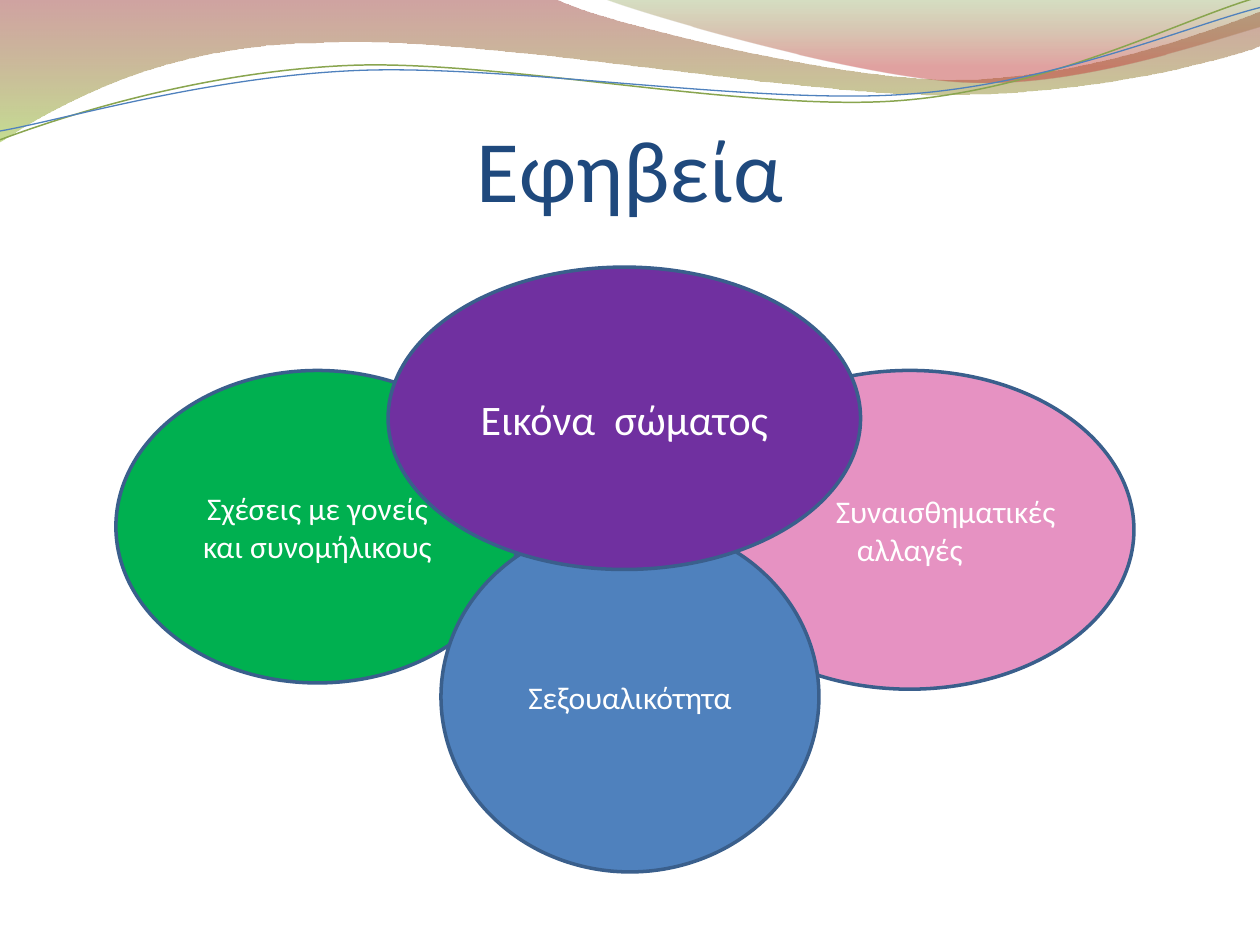
from pptx import Presentation
from pptx.dml.color import RGBColor
from pptx.enum.shapes import MSO_SHAPE
from pptx.enum.text import MSO_ANCHOR, MSO_AUTO_SIZE, PP_ALIGN
from pptx.oxml.ns import qn
from pptx.util import Inches, Pt
from lxml.etree import SubElement

THEME = {
    "font": "Calibri", "title": "1F497D", "text": "FFFFFF", "edge": "3A5F8C",
    "green": "00B050", "pink": "E692C2", "blue": "4F81BD", "purple": "7030A0",
    "big": 50, "mid": 24, "small": 18,
}
TITLE = "Εφηβεία"

# Ovals, back to front: text, fill, size, first-line indent, left, top, width, height
OVALS = [
    ("Σχέσεις με γονείς και συνομήλικους", "green", "small", 0, (0.92, 2.94, 3.2, 2.48)),
    ("Συναισθηματικές αλλαγές", "pink", "small", 0.57, (5.44, 2.94, 3.56, 2.53)),
    ("Σεξουαλικότητα", "blue", "small", 0, (3.5, 4.14, 3, 2.78)),
    ("Εικόνα  σώματος", "purple", "mid", 0, (3.08, 2.12, 3.75, 2.4)),
]

# Waves: a start point, then steps of one point (line) or three (curve)
BANDS = [
    ([(0, -0.01), (4.4, -0.01),
      (4.76, 0.17, 6.64, 0.63, 7.58, 0.63), (8.53, 0.63, 9.58, 0.26, 10, 0.09),
      (10.01, 0.36),
      (9.83, 0.44, 8.7, 0.76, 7.46, 0.75), (6.22, 0.75, 3.82, 0.28, 2.57, 0.34),
      (1.29, 0.35, 0.46, 0.83, -0.01, 1.13), (0, -0.01)],
     [(0, "973330", 45), (1, "95C238", 55)]),
    ([(4.79, -0.01),
      (5.09, 0.11, 6.82, 0.62, 7.69, 0.65), (8.56, 0.69, 9.61, 0.32, 10, 0.21),
      (10, 0), (4.79, -0.01)],
     [(0, "769537", 30), (0.8, "BE3330", 45)]),
]
STRANDS = [
    ([(0, 1.11), (0.48, 0.93, 1.58, 0.57, 2.77, 0.52),
      (3.95, 0.47, 5.93, 0.89, 7.13, 0.8), (8.33, 0.71, 9.38, 0.15, 9.98, -0.02)],
     "89A54F", 0.85),
    ([(0, 1.04), (0.47, 0.96, 1.64, 0.61, 2.83, 0.56),
      (4.03, 0.51, 5.97, 0.83, 7.17, 0.75), (8.36, 0.67, 9.41, 0.21, 10, 0.06)],
     "4F81BD", 0.75),
]


def color(name):
    return RGBColor.from_string(THEME.get(name, name))


def draw(slide, steps, close):
    """Draw the end points as lines, then bend the curved steps."""
    ends = [(Inches(step[-2]), Inches(step[-1])) for step in steps]
    pen = slide.shapes.build_freeform(*ends[0], scale=1.0)
    pen.add_line_segments(ends[1:], close=close)
    shape = pen.convert_to_shape()
    shape.shadow.inherit = False
    lines = list(shape._element.spPr.iter(qn("a:lnTo")))
    for line, step in zip(lines, steps[1:]):
        if len(step) == 2:
            continue
        line.tag = qn("a:cubicBezTo")
        line.remove(line[0])
        for x, y in zip(step[::2], step[1::2]):
            point = SubElement(line, qn("a:pt"))
            point.set("x", str(Inches(x) - shape.left))
            point.set("y", str(Inches(y) - shape.top))
    return shape


def add_band(slide, steps, stops):
    band = draw(slide, steps, True)
    band.line.fill.background()
    band.fill.gradient()
    band.fill.gradient_angle = 270
    for stop, (place, tint, _) in zip(band.fill.gradient_stops, stops):
        stop.position = place
        stop.color.rgb = color(tint)
    tints = band._element.spPr.iter(qn("a:srgbClr"))
    for node, (_, _, alpha) in zip(list(tints), stops):
        SubElement(node, qn("a:alpha")).set("val", str(alpha * 1000))


def add_strand(slide, steps, tint, width):
    strand = draw(slide, steps, False)
    strand.fill.background()
    strand.line.color.rgb = color(tint)
    strand.line.width = Pt(width)


def write(shape, text, size, tint):
    frame = shape.text_frame
    frame.text = text
    frame.word_wrap = True
    frame.auto_size = MSO_AUTO_SIZE.NONE
    para = frame.paragraphs[0]
    para.alignment = PP_ALIGN.CENTER
    font = para.runs[0].font
    font.name, font.size = THEME["font"], Pt(THEME[size])
    font.color.rgb = color(tint)
    return frame


def add_oval(slide, text, fill, size, indent, box):
    oval = slide.shapes.add_shape(MSO_SHAPE.OVAL, *map(Inches, box))
    oval.shadow.inherit = False
    oval.fill.solid()
    oval.fill.fore_color.rgb = color(fill)
    oval.line.color.rgb = color("edge")
    oval.line.width = Pt(2)
    frame = write(oval, text, size, "text")
    frame.vertical_anchor = MSO_ANCHOR.MIDDLE
    if indent:
        props = frame.paragraphs[0]._p.get_or_add_pPr()
        props.set("indent", str(Inches(indent)))
        frame.margin_left = frame.margin_right = Inches(0.05)


def add_title(slide):
    title = slide.shapes.title
    title.left, title.top, title.width, title.height = map(Inches, (0.5, 0.5, 9, 1.25))
    frame = write(title, TITLE, "big", "title")
    frame.vertical_anchor = MSO_ANCHOR.BOTTOM
    frame.margin_left = frame.margin_right = frame.margin_bottom = 0
    frame.margin_top = Inches(0.05)
    # Bring the title in front of the waves
    slide.shapes._spTree.append(title._element)


def main():
    deck = Presentation()
    deck.slide_width, deck.slide_height = Inches(10), Inches(7.5)
    slide = deck.slides.add_slide(deck.slide_layouts[5])
    for band in BANDS:
        add_band(slide, *band)
    for strand in STRANDS:
        add_strand(slide, *strand)
    add_title(slide)
    for oval in OVALS:
        add_oval(slide, *oval)
    deck.save("out.pptx")


if __name__ == "__main__":
    main()
